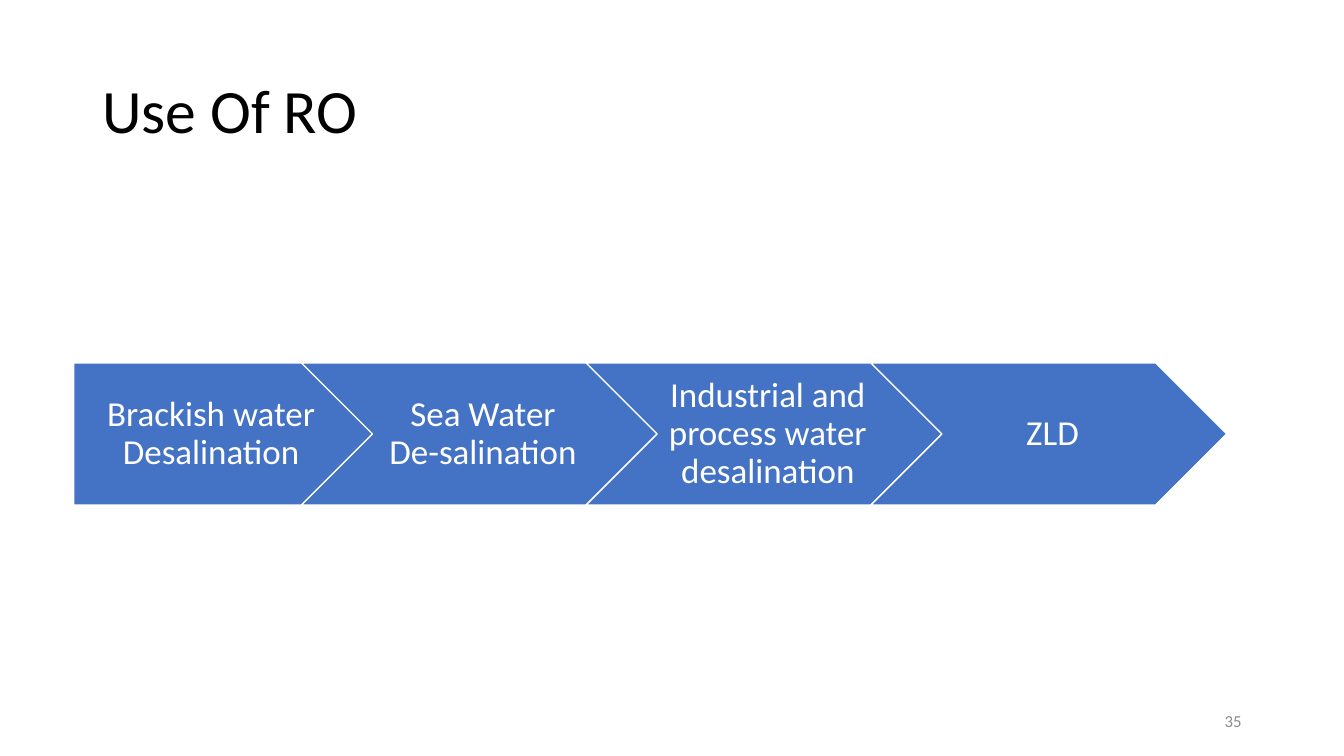
"""Build the slide on the uses of reverse osmosis."""
from dataclasses import dataclass

import pptx
import pptx.dml.color
import pptx.enum.shapes
import pptx.enum.text
import pptx.util

Pt = pptx.util.Pt
RGB = pptx.dml.color.RGBColor
Shape = pptx.enum.shapes.MSO_SHAPE
Align = pptx.enum.text.PP_ALIGN
Anchor = pptx.enum.text.MSO_ANCHOR


@dataclass(frozen=True)
class Theme:
    font: str = "Calibri"
    ink: RGB = RGB(0x00, 0x00, 0x00)
    muted: RGB = RGB(0x8C, 0x8C, 0x8C)
    blue: RGB = RGB(0x44, 0x72, 0xC4)
    white: RGB = RGB(0xFF, 0xFF, 0xFF)
    title: int = 44
    step: int = 25
    number: int = 12


@dataclass(frozen=True)
class Box:
    left: float
    top: float
    width: float
    height: float

    def place(self) -> tuple:
        return Pt(self.left), Pt(self.top), Pt(self.width), Pt(self.height)


@dataclass(frozen=True)
class Label:
    text: str
    size: int
    color: RGB
    align: Align
    spacing: float = 1.0


@dataclass(frozen=True)
class Step:
    text: str
    kind: Shape
    box: Box
    inset: float


THEME = Theme()
TOP, HEIGHT = 259.2, 101.5
START, PITCH, WIDTH = 215.3, 203.4, 254.2
USES = ["Sea Water De-salination", "Industrial and process water desalination", "ZLD"]
STEPS = [
    Step("Brackish water Desalination", Shape.PENTAGON, Box(52.6, TOP, 213.8, HEIGHT), 10.7)
] + [
    Step(use, Shape.CHEVRON, Box(START + i * PITCH, TOP, WIDTH, HEIGHT), 8)
    for i, use in enumerate(USES)
]


def write(shape, label: Label) -> None:
    frame = shape.text_frame
    frame.word_wrap = True
    frame.vertical_anchor = Anchor.MIDDLE
    para = frame.paragraphs[0]
    para.text = label.text
    para.alignment = label.align
    para.line_spacing = label.spacing
    para.font.name = THEME.font
    para.font.size = Pt(label.size)
    para.font.color.rgb = label.color


def draw_text(slide, box: Box, label: Label) -> None:
    write(slide.shapes.add_textbox(*box.place()), label)


def draw_step(slide, step: Step) -> None:
    shape = slide.shapes.add_shape(step.kind, *step.box.place())
    shape.shadow.inherit = False
    shape.adjustments[0] = 0.5
    shape.fill.solid()
    shape.fill.fore_color.rgb = THEME.blue
    shape.line.color.rgb = THEME.white
    shape.line.width = Pt(1)
    frame = shape.text_frame
    frame.margin_left, frame.margin_right = Pt(step.inset), Pt(2.7)
    frame.margin_top = frame.margin_bottom = Pt(5.3)
    write(shape, Label(step.text, THEME.step, THEME.white, Align.CENTER, 0.9))


def main() -> None:
    deck = pptx.Presentation()
    deck.slide_width, deck.slide_height = Pt(960), Pt(540)
    slide = deck.slides.add_slide(deck.slide_layouts[6])
    draw_text(slide, Box(66, 28.8, 828, 104.4),
              Label("Use Of RO", THEME.title, THEME.ink, Align.LEFT, 0.9))
    for step in STEPS:
        draw_step(slide, step)
    draw_text(slide, Box(678, 500.4, 216, 28.8),
              Label("35", THEME.number, THEME.muted, Align.RIGHT))
    deck.save("out.pptx")


if __name__ == "__main__":
    main()
